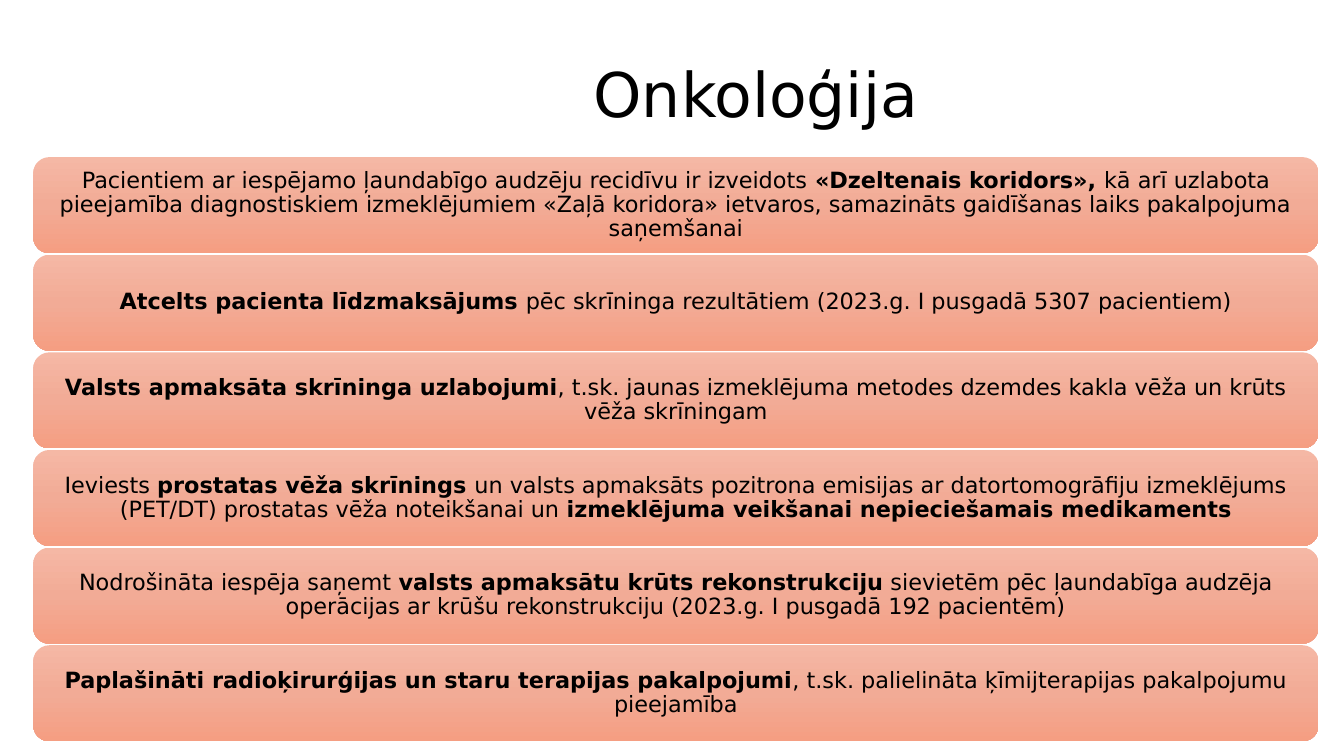
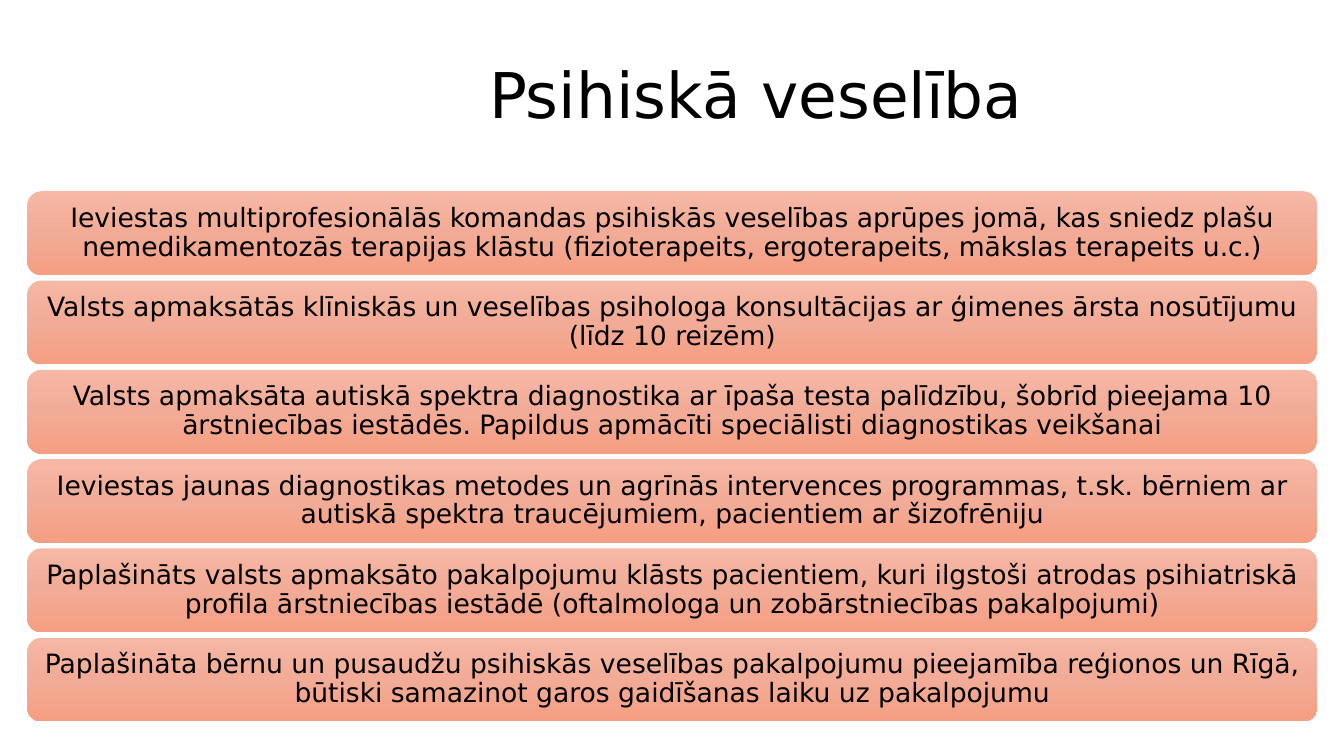
from copy import deepcopy
from dataclasses import dataclass

from pptx import Presentation
from pptx import util as u
from pptx.dml.color import RGBColor
from pptx.enum import shapes, text
from pptx.oxml.ns import qn

# Shared look
HUES = {"text": "000000", "top": "F5B8A5", "mid": "F2AB96", "low": "F59E82"}
STOPS = ((0, "top"), (0.5, "mid"), (1, "low"))
FACE = "DejaVu Sans"
FRAME = {
    "word_wrap": True,
    "auto_size": text.MSO_AUTO_SIZE.NONE,
    "vertical_anchor": text.MSO_ANCHOR.MIDDLE,
}
SIDES = ("margin_left", "margin_right", "margin_top", "margin_bottom")
TITLE = {
    "left": u.Cm(5.93),
    "top": u.Cm(0.76),
    "width": u.Cm(26.24),
    "height": u.Cm(3.18),
}


@dataclass(frozen=True)
class Stack:
    """A column of equal bars; lengths in cm, sizes in points."""
    left: float
    top: float
    width: float
    height: float
    pitch: float
    inset: float
    size: int


@dataclass(frozen=True)
class Page:
    title: str
    size: int
    stack: Stack
    lines: tuple[str, ...]  # text between asterisks is bold


PAGES = (
    Page("Onkoloģija", 44, Stack(0.84, 3.96, 32.39, 2.42, 2.46, 0.17, 16), (
        "Pacientiem ar iespējamo ļaundabīgo audzēju recidīvu ir izveidots "
        "*«Dzeltenais koridors», *kā arī uzlabota pieejamība diagnostiskiem "
        "izmeklējumiem «Zaļā koridora» ietvaros, samazināts gaidīšanas laiks "
        "pakalpojuma saņemšanai",
        "*Atcelts pacienta līdzmaksājums *pēc skrīninga rezultātiem "
        "(2023.g. I pusgadā 5307 pacientiem)",
        "*Valsts apmaksāta skrīninga uzlabojumi*, t.sk. jaunas izmeklējuma "
        "metodes dzemdes kakla vēža un krūts vēža skrīningam",
        "Ieviests *prostatas vēža skrīnings *un valsts apmaksāts pozitrona "
        "emisijas ar datortomogrāfiju izmeklējums (PET/DT) prostatas vēža "
        "noteikšanai un *izmeklējuma veikšanai nepieciešamais medikaments*",
        "Nodrošināta iespēja saņemt *valsts apmaksātu krūts rekonstrukciju* "
        "sievietēm pēc ļaundabīga audzēja operācijas ar krūšu rekonstrukciju "
        "(2023.g. I pusgadā 192 pacientēm)",
        "*Paplašināti radioķirurģijas un staru terapijas pakalpojumi*, t.sk. "
        "palielināta ķīmijterapijas pakalpojumu pieejamība",
    )),
    Page("Psihiskā veselība", 45, Stack(0.69, 4.82, 32.51, 2.11, 2.25, 0.19, 19), (
        "Ieviestas multiprofesionālās komandas psihiskās veselības aprūpes "
        "jomā, kas sniedz plašu nemedikamentozās terapijas klāstu "
        "(fizioterapeits, ergoterapeits, mākslas terapeits u.c.)",
        "Valsts apmaksātās klīniskās un veselības psihologa konsultācijas ar "
        "ģimenes ārsta nosūtījumu (līdz 10 reizēm)",
        "Valsts apmaksāta autiskā spektra diagnostika ar īpaša testa palīdzību, "
        "šobrīd pieejama 10 ārstniecības iestādēs. Papildus apmācīti "
        "speciālisti diagnostikas veikšanai",
        "Ieviestas jaunas diagnostikas metodes un agrīnās intervences "
        "programmas, t.sk. bērniem ar autiskā spektra traucējumiem, "
        "pacientiem ar šizofrēniju",
        "Paplašināts valsts apmaksāto pakalpojumu klāsts pacientiem, kuri "
        "ilgstoši atrodas psihiatriskā profila ārstniecības iestādē "
        "(oftalmologa un zobārstniecības pakalpojumi)",
        "Paplašināta bērnu un pusaudžu psihiskās veselības pakalpojumu "
        "pieejamība reģionos un Rīgā, būtiski samazinot garos gaidīšanas "
        "laiku uz pakalpojumu",
    )),
)


def apply(item, values: dict) -> None:
    for name, value in values.items():
        setattr(item, name, value)


def write(frame, words: str, size: int) -> None:
    """Fill a text frame with one centred paragraph."""
    apply(frame, FRAME)
    para = frame.paragraphs[0]
    para.alignment = text.PP_ALIGN.CENTER
    for i, part in enumerate(words.split("*")):
        if part:
            run = para.add_run()
            run.text = part
            apply(run.font, {"name": FACE, "size": u.Pt(size), "bold": i % 2 == 1})
            run.font.color.rgb = RGBColor.from_string(HUES["text"])


def shade(bar) -> None:
    """Give a bar the vertical three-stop gradient."""
    bar.fill.gradient()
    bar.fill.gradient_angle = 270
    first = bar._element.spPr.find(".//" + qn("a:gs"))
    first.addnext(deepcopy(first))
    for stop, (place, hue) in zip(bar.fill.gradient_stops, STOPS):
        stop.position = place
        stop.color.rgb = RGBColor.from_string(HUES[hue])


def draw_bar(slide, stack: Stack, row: int, words: str) -> None:
    top = stack.top + row * stack.pitch
    box = (u.Cm(x) for x in (stack.left, top, stack.width, stack.height))
    bar = slide.shapes.add_shape(shapes.MSO_SHAPE.ROUNDED_RECTANGLE, *box)
    bar.shadow.inherit = False
    bar.line.fill.background()
    shade(bar)
    apply(bar.text_frame, dict.fromkeys(SIDES, u.Cm(stack.inset)))
    write(bar.text_frame, words, stack.size)
    bar.text_frame.paragraphs[0].line_spacing = 0.9


def draw_page(deck, page: Page) -> None:
    slide = deck.slides.add_slide(deck.slide_layouts[5])
    title = slide.shapes.title
    apply(title, TITLE)
    write(title.text_frame, page.title, page.size)
    for row, words in enumerate(page.lines):
        draw_bar(slide, page.stack, row, words)


def main() -> None:
    deck = Presentation()
    apply(deck, {"slide_width": u.Cm(33.87), "slide_height": u.Cm(19.05)})
    for page in PAGES:
        draw_page(deck, page)
    deck.save("out.pptx")


if __name__ == "__main__":
    main()
